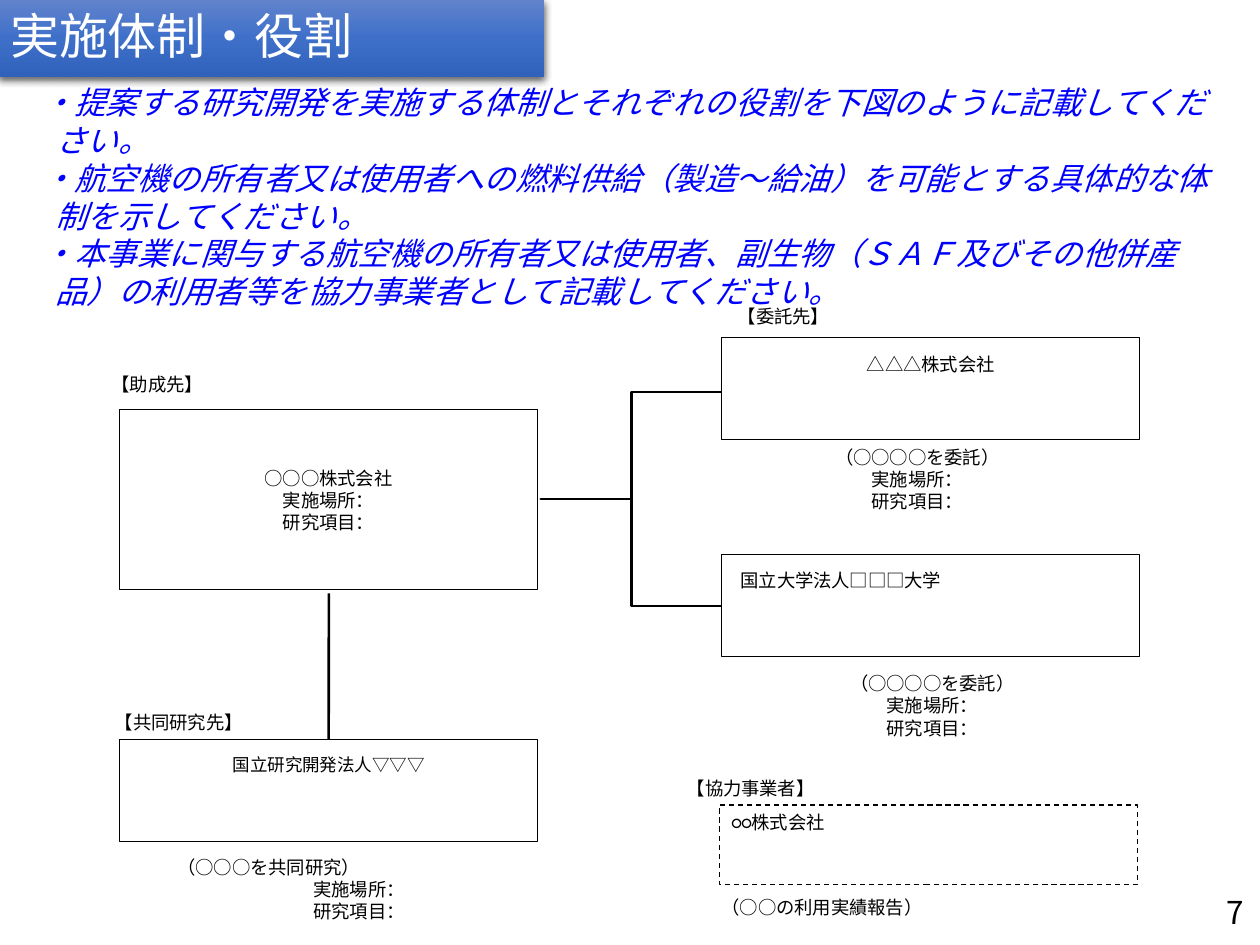
from lxml import etree
from pptx import Presentation
from pptx.dml.color import RGBColor
from pptx.enum.dml import MSO_LINE
from pptx.enum.shapes import MSO_CONNECTOR, MSO_SHAPE
from pptx.enum.text import MSO_ANCHOR, MSO_AUTO_SIZE, PP_ALIGN
from pptx.oxml import parse_xml
from pptx.oxml.ns import qn
from pptx.util import Cm, Pt

RECTANGLE, LEFT_BRACE = MSO_SHAPE.RECTANGLE, MSO_SHAPE.LEFT_BRACE
STRAIGHT, DASH = MSO_CONNECTOR.STRAIGHT, MSO_LINE.DASH
TOP, MIDDLE = MSO_ANCHOR.TOP, MSO_ANCHOR.MIDDLE
LEFT, CENTER, RIGHT = PP_ALIGN.LEFT, PP_ALIGN.CENTER, PP_ALIGN.RIGHT
JUSTIFY = PP_ALIGN.JUSTIFY
NO_AUTOFIT = MSO_AUTO_SIZE.NONE
BLACK, WHITE, BLUE = "000000", "FFFFFF", "0000FF"
GOTHIC = "Noto Sans CJK JP"
DRAWING = 'xmlns:a="http://schemas.openxmlformats.org/drawingml/2006/main"'


def add_run(para, text, size, font, color=BLACK):
    """Add a run whose Latin and East Asian typefaces are the same."""
    span = para.add_run()
    span.text = text
    span.font.size = Pt(size)
    span.font.name = font
    span.font.color.rgb = RGBColor.from_string(color)
    east_asian = etree.SubElement(span.font._element, qn("a:ea"))
    east_asian.set("typeface", font)
    return span


def write_lines(box, lines, size=10.5, font="Roboto", anchor=TOP,
                side=0, vertical=0):
    """Fill a box with (alignment, text) lines inside the given margins."""
    frame = box.text_frame
    frame.word_wrap = True
    frame.vertical_anchor = anchor
    frame.margin_left = frame.margin_right = Cm(side)
    frame.margin_top = frame.margin_bottom = Cm(vertical)
    for number, (align, text) in enumerate(lines):
        para = frame.add_paragraph() if number else frame.paragraphs[0]
        para.alignment = align
        add_run(para, text, size, font)


deck = Presentation()
deck.slide_width, deck.slide_height = Cm(25.4), Cm(19.05)
page = deck.slides.add_slide(deck.slide_layouts[1])
shapes = page.shapes

# Title band
title = shapes.title
title.left, title.top, title.width, title.height = Cm(-0.05), Cm(0), Cm(11.02), Cm(1.55)
title.text_frame.auto_size = NO_AUTOFIT
title.text_frame.vertical_anchor = MIDDLE
heading = title.text_frame.paragraphs[0]
heading.alignment = LEFT
heading.line_spacing = 0.9
add_run(heading, "実施体制・役割", 28, "Calibri", WHITE)
stops = "".join(
    f'<a:gs pos="{position}"><a:srgbClr val="{color}"/></a:gs>'
    for position, color in [(0, "6183CB"), (50000, "3E70CA"), (100000, "3062BB")])
for xml in [
    f'<a:prstGeom {DRAWING} prst="rect"><a:avLst/></a:prstGeom>',
    f'<a:gradFill {DRAWING} rotWithShape="1"><a:gsLst>{stops}</a:gsLst>'
    '<a:lin ang="5400000" scaled="0"/></a:gradFill>',
    f'<a:effectLst {DRAWING}><a:outerShdw blurRad="57150" dist="19050" dir="5400000" '
    'algn="ctr" rotWithShape="0"><a:srgbClr val="000000"><a:alpha val="63000"/>'
    '</a:srgbClr></a:outerShdw></a:effectLst>',
]:
    title._element.spPr.append(parse_xml(xml))

# Instructions
body = page.placeholders[1]
body.left, body.top, body.width, body.height = Cm(0.61), Cm(1.55), Cm(24.18), Cm(4.11)
body.text_frame.auto_size = NO_AUTOFIT
instructions = [
    [("・提案する研究開発を実施する体制とそれぞれの役割を下図のように記載してください。", "Calibri")],
    [("・航空機の所有者又は使用者への燃料供給（製造～給油）を可能とする具体的な体制を示してください。", "Calibri")],
    [("・本事業に関与する", "Calibri"),
     ("航空機の所有者又は使用者、副生物（ＳＡＦ及びその他併産品）の利用者等", GOTHIC),
     ("を協力事業者として記載してください。", "Calibri")],
]
for number, runs in enumerate(instructions):
    para = body.text_frame.add_paragraph() if number else body.text_frame.paragraphs[0]
    para.space_before = Pt(0)
    properties = para._p.get_or_add_pPr()
    properties.set("marL", str(Cm(0.25)))
    properties.set("indent", str(Cm(-0.25)))
    etree.SubElement(properties, qn("a:buNone"))
    for text, font in runs:
        add_run(para, text, 18, font, BLUE).font.italic = True

# Organisation boxes: left, top, height, lines, size, anchor, vertical margin
site_and_topic = [(CENTER, "実施場所："), (CENTER, "研究項目：")]
organisations = [
    (2.41, 8.26, 3.63, [(CENTER, "○○○株式会社")] + site_and_topic, 10.5, MIDDLE, 0.41),
    (14.55, 6.81, 2.06, [(CENTER, "△△△株式会社")], 10.5, TOP, 0.3),
    (14.55, 11.18, 2.06, [(JUSTIFY, "国立大学法人□□□大学")], 10.5, TOP, 0.3),
    (2.41, 14.91, 2.06, [(CENTER, "国立研究開発法人▽▽▽")], 10, TOP, 0.3),
]
boxes = []
for left, top, height, lines, size, anchor, vertical in organisations:
    box = shapes.add_shape(RECTANGLE, Cm(left), Cm(top), Cm(8.43), Cm(height))
    box.shadow.inherit = False
    box.fill.solid()
    box.fill.fore_color.rgb = RGBColor.from_string(WHITE)
    box.line.color.rgb = RGBColor.from_string(BLACK)
    box.line.width = Pt(0.5)
    write_lines(box, lines, size, anchor=anchor, vertical=vertical)
    boxes.append(box)
grantee, company, university, partner = boxes
university.text_frame.paragraphs[0]._p.get_or_add_pPr().set("indent", str(Cm(0.38)))

supporter = shapes.add_shape(RECTANGLE, Cm(14.5), Cm(16.23), Cm(8.43), Cm(1.6))
supporter.shadow.inherit = False
supporter.fill.background()
supporter.line.color.rgb = RGBColor.from_string(BLACK)
supporter.line.width = Pt(0.75)
supporter.line.dash_style = DASH
write_lines(supporter, [(LEFT, "○○株式会社")], font="Calibri", side=0.25, vertical=0.13)

# Links between the organisations
brace = shapes.add_shape(LEFT_BRACE, Cm(10.9), Cm(7.9), Cm(3.66), Cm(4.32))
brace.adjustments[0], brace.adjustments[1] = 0, 0.5
brace.shadow.inherit = False
brace.fill.background()
link = shapes.add_connector(STRAIGHT, Cm(6.63), Cm(11.96), Cm(6.63), Cm(14.91))
link.end_connect(partner, 0)
etree.SubElement(link._element.spPr, qn("a:effectLst"))
for stroke in (brace, link):
    stroke.line.color.rgb = RGBColor.from_string(BLACK)
    stroke.line.width = Pt(1.5)

# Role labels above the boxes
for left, top, width, text in [
    (1.7, 7.39, 2.95, "【助成先】"),
    (1.7, 14.2, 3.81, "【共同研究先】"),
    (13.89, 6.02, 3.81, "【委託先】"),
    (13.23, 15.54, 3.81, "【協力事業者】"),
]:
    label = shapes.add_textbox(Cm(left), Cm(top), Cm(width), Cm(0.71))
    write_lines(label, [(CENTER, text)], side=0.25, vertical=0.13)

# Notes below the boxes
for left, top, width, height, lines in [
    (15.14, 8.99, 6.71, 1.65, [(CENTER, "（○○○○を委託）")] + site_and_topic),
    (15.44, 13.56, 6.71, 1.75, [(CENTER, "（○○○○を委託）")] + site_and_topic),
    (3.58, 17.25, 7.32, 1.8, [(JUSTIFY, "（○○○を共同研究）")] + site_and_topic),
    (14.55, 18.06, 5.38, 0.46, [(JUSTIFY, "（○○の利用実績報告）")]),
]:
    note = shapes.add_textbox(Cm(left), Cm(top), Cm(width), Cm(height))
    write_lines(note, lines)

page_number = shapes.add_textbox(Cm(23.6), Cm(18.06), Cm(1.47), Cm(0.64))
write_lines(page_number, [(RIGHT, "7")], 18, GOTHIC, MIDDLE)

deck.save("out.pptx")
